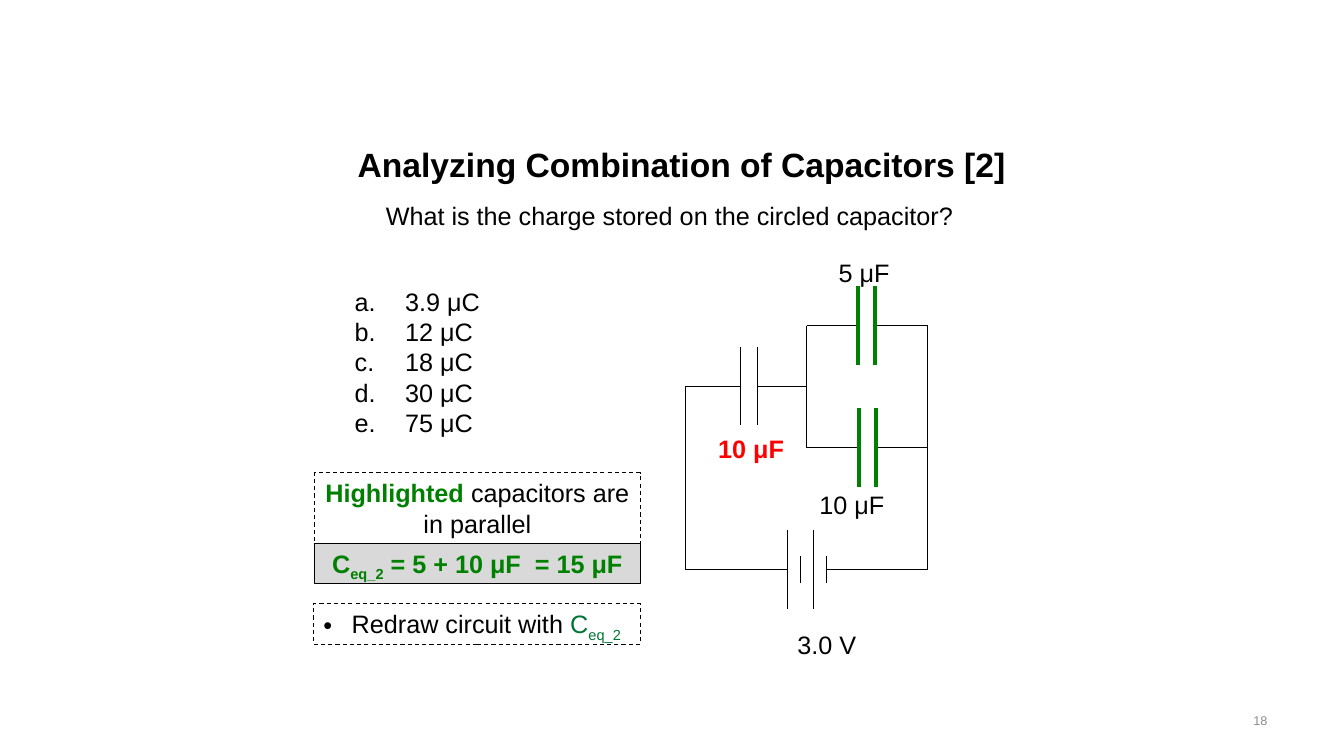
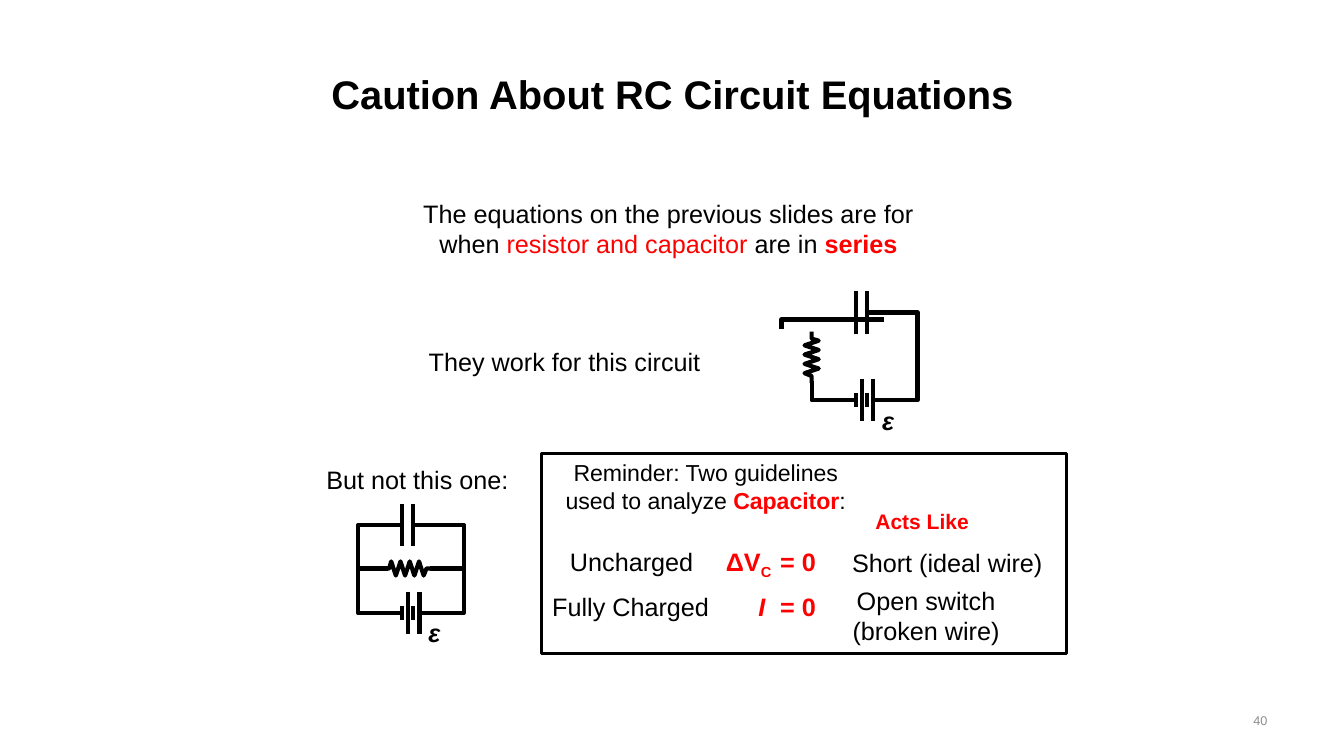
from dataclasses import dataclass

import pptx
import pptx.dml.color
import pptx.enum.dml
import pptx.enum.shapes
import pptx.enum.text
import pptx.oxml.xmlchemy
import pptx.util

ALIGN = pptx.enum.text.PP_ALIGN
ANCHOR = pptx.enum.text.MSO_ANCHOR


@dataclass(frozen=True)
class Theme:
    font: str = "Arial"
    black: str = "000000"
    red: str = "FF0000"
    green: str = "008000"
    dark_green: str = "007434"
    band: str = "D9D9D9"
    page_grey: str = "8C8C8C"
    title_small: float = 24
    title_large: float = 28.5
    body: float = 18
    reminder: float = 16.5
    heading: float = 15
    page_number: float = 9
    thin: float = 0.75
    frame: float = 2
    thick: float = 3


THEME = Theme()

# A paragraph is a list of spans; a span is (text, style words).
# A label is (left, top, width, height, paragraphs, size).
COMBINATION = {
    "title": ("Analyzing Combination of Capacitors [2]", THEME.title_small,
              (3.29, 1.16, 6.94, 0.94)),
    "number": "18",
    "labels": [
        (3.17, 1.94, 6.94, 0.4,
         [[("What is the charge stored on the circled capacitor?", "")]], THEME.body),
        (7.73, 6.19, 0.94, 0.4, [[("3.0 V", "")]], THEME.body),
        (6.98, 4.25, 0.94, 0.4, [[("10 μF", "red bold")]], THEME.body),
        (8.1, 2.5, 0.94, 0.4, [[("5 μF", "")]], THEME.body),
        (7.98, 4.81, 0.94, 0.4, [[("10 μF", "")]], THEME.body),
    ],
}
ANSWERS = ["3.9 μC", "12 μC", "18 μC", "30 μC", "75 μC"]
PARALLEL_NOTE = [[("Highlighted", "green bold"), (" capacitors are in parallel", "")]]
EQUIVALENT = [[("C", "green bold"), ("eq_2", "green bold sub"),
               (" = 5 + 10 μF  = 15 μF", "green bold")]]
NEXT_STEP = [[("Redraw circuit with ", ""), ("C", "dark_green"), ("eq_2", "dark_green sub")]]

CAUTION = {
    "title": ("Caution About RC Circuit Equations", THEME.title_large, (0.67, 0.3, 12, 1.25)),
    "number": "40",
    "labels": [
        (3.91, 1.92, 5.44, 0.71,
         [[("The equations on the previous slides are for when ", ""),
           ("resistor and capacitor ", "red"), ("are in ", ""), ("series", "red bold")]],
         THEME.body),
        (3.6, 3.39, 4, 0.4, [[("They work for this circuit", "")]], THEME.body),
        (2.92, 4.56, 2.44, 0.4, [[("But not this one:", "")]], THEME.body),
        (5.45, 4.5, 3.1, 0.66,
         [[("Reminder: Two guidelines used to analyze ", ""),
           ("Capacitor", "red bold"), (":", "")]], THEME.reminder),
        (8.49, 5, 1.31, 0.35, [[("Acts Like", "red bold")]], THEME.heading),
        (5.45, 5.37, 1.63, 0.4, [[("Uncharged", "")]], THEME.body),
        (7.06, 5.37, 0.73, 0.4, [[("ΔV", "red bold"), ("C", "red bold sub")]], THEME.body),
        (7.6, 5.37, 0.63, 0.4, [[("= 0", "red bold")]], THEME.body),
        (8.29, 5.38, 2.21, 0.4, [[("Short (ideal wire)", "")]], THEME.body),
        (5.35, 5.82, 1.81, 0.4, [[("Fully Charged", "")]], THEME.body),
        (7.4, 5.82, 0.31, 0.4, [[("Ι", "red bold italic")]], THEME.body),
        (7.6, 5.82, 0.63, 0.4, [[("= 0", "red bold")]], THEME.body),
        (8.28, 5.76, 1.81, 0.71,
         [[("Open switch", "")], [("(broken wire)", "")]], THEME.body),
    ],
}
REMINDER_FRAME = (5.37, 4.5, 5.21, 1.98)


def rgb(value):
    return pptx.dml.color.RGBColor.from_string(value)


def place(numbers):
    return [pptx.util.Inches(number) for number in numbers]


def write(frame, paragraphs, size, align=ALIGN.CENTER, anchor=ANCHOR.TOP):
    frame.word_wrap = True
    frame.auto_size = pptx.enum.text.MSO_AUTO_SIZE.NONE
    frame.vertical_anchor = anchor
    for index, spans in enumerate(paragraphs):
        para = frame.add_paragraph() if index else frame.paragraphs[0]
        para.alignment = align
        for text, style in spans:
            words = style.split()
            span = para.add_run()
            span.text = text
            font = span.font
            font.name, font.size = THEME.font, pptx.util.Pt(size)
            font.bold, font.italic = "bold" in words, "italic" in words
            colours = [word for word in words if hasattr(THEME, word)]
            font.color.rgb = rgb(getattr(THEME, colours[0] if colours else "black"))
            if "sub" in words:
                span._r.get_or_add_rPr().set("baseline", "-25000")


def set_bullets(frame, indent, tag, **attributes):
    margin = pptx.util.Inches(indent)
    for para in frame.paragraphs:
        properties = para._p.get_or_add_pPr()
        properties.set("marL", str(int(margin)))
        properties.set("indent", str(-int(margin)))
        font = pptx.oxml.xmlchemy.OxmlElement("a:buFont")
        font.set("typeface", THEME.font)
        bullet = pptx.oxml.xmlchemy.OxmlElement(tag)
        for name, value in attributes.items():
            bullet.set(name, value)
        properties.extend([font, bullet])


def add_label(page, left, top, width, height, paragraphs, size, **options):
    box = page.shapes.add_textbox(*place((left, top, width, height)))
    write(box.text_frame, paragraphs, size, **options)
    return box


def add_box(page, area, paragraphs=(), fill=None, dashed=False,
            width=THEME.thin, align=ALIGN.CENTER):
    box = page.shapes.add_shape(pptx.enum.shapes.MSO_SHAPE.RECTANGLE, *place(area))
    box.shadow.inherit = False
    if fill:
        box.fill.solid()
        box.fill.fore_color.rgb = rgb(fill)
    else:
        box.fill.background()
    box.line.color.rgb = rgb(THEME.black)
    box.line.width = pptx.util.Pt(width)
    if dashed:
        box.line.dash_style = pptx.enum.dml.MSO_LINE.DASH
    write(box.text_frame, paragraphs, THEME.body, align)
    return box


def add_line(page, start, end, width, colour=THEME.black):
    line = page.shapes.add_connector(
        pptx.enum.shapes.MSO_CONNECTOR.STRAIGHT, *place(start + end))
    line.line.color.rgb = rgb(colour)
    line.line.width = pptx.util.Pt(width)
    line._element.spPr.append(pptx.oxml.xmlchemy.OxmlElement("a:effectLst"))


def add_wire(page, points):
    """Draw a thick open line through the points."""
    first, *others = [tuple(place(point)) for point in points]
    builder = page.shapes.build_freeform(*first)
    builder.add_line_segments(others, close=False)
    wire = builder.convert_to_shape()
    wire.shadow.inherit = False
    wire.fill.background()
    wire.line.color.rgb = rgb(THEME.black)
    wire.line.width = pptx.util.Pt(THEME.thick)


def add_plates(page, y, plates, width, colour=THEME.black):
    """Draw upright plates, each given as (x, half height), centred on y."""
    for x, half in plates:
        add_line(page, (x, y - half), (x, y + half), width, colour)


def add_resistor(page, x, y, upright=False):
    zigzag = [(0.09 + 0.05 * i * 0.92, 0.07 if i % 2 else -0.07) for i in range(8)]
    outline = [(0, 0), (0.07, 0), *zigzag, (0.44, 0), (0.51, 0)]
    add_wire(page, [(x - side, y + along) if upright else (x + along, y + side)
                    for along, side in outline])


def add_rc_core(page, x, y):
    """Draw capacitor, battery and right-hand wire; x, y is the capacitor's right plate."""
    floor = y + 0.87
    add_wire(page, [(x, y), (x + 0.5, y), (x + 0.5, floor), (x + 0.06, floor)])
    add_wire(page, [(x - 0.11, floor), (x - 0.55, floor), (x - 0.55, floor - 0.19)])
    add_plates(page, y, [(x - 0.11, 0.21), (x, 0.21)], THEME.thick)
    add_plates(page, floor, [(x - 0.11, 0.07), (x - 0.05, 0.21), (x, 0.07), (x + 0.06, 0.21)],
               THEME.thick)
    add_label(page, x + 0.05, floor, 0.4, 0.4, [[("ε", "bold italic")]], THEME.body,
              align=ALIGN.LEFT)


def add_page(deck, content):
    page = deck.slides.add_slide(deck.slide_layouts[5])
    text, size, area = content["title"]
    title = page.shapes.title
    title.left, title.top, title.width, title.height = place(area)
    write(title.text_frame, [[(text, "bold")]], size, anchor=ANCHOR.MIDDLE)
    for label in content["labels"]:
        add_label(page, *label)
    add_label(page, 9.56, 6.95, 3.11, 0.4, [[(content["number"], "page_grey")]],
              THEME.page_number, align=ALIGN.RIGHT, anchor=ANCHOR.MIDDLE)
    return page


def build_combination(deck):
    page = add_page(deck, COMBINATION)
    left, split, right = 6.8, 8, 9.2
    top, middle, lower, floor = 3.23, 3.83, 4.44, 5.65
    capacitors = [  # first plate, y, wire start, wire end, plate colour, plate width
        (8.51, top, split, right, THEME.green, THEME.thick),
        (7.34, middle, left, split, THEME.black, THEME.thin),
        (8.52, lower, split, right, THEME.green, THEME.thick),
    ]
    for x, y, start, end, colour, width in capacitors:
        second = x + 0.17
        add_line(page, (start, y), (x, y), THEME.thin)
        add_line(page, (second, y), (end, y), THEME.thin)
        add_plates(page, y, [(x, 0.39), (second, 0.39)], width, colour)

    cells = [(7.81 + 0.13 * i, 0.13 if i % 2 else 0.39) for i in range(4)]
    add_plates(page, floor, cells, THEME.thin)
    add_line(page, (left, floor), (cells[0][0], floor), THEME.thin)
    add_line(page, (cells[-1][0], floor), (right, floor), THEME.thin)
    for x, start, end in [(left, middle, floor), (split, top, lower), (right, top, floor)]:
        add_line(page, (x, start), (x, end), THEME.thin)

    answers = add_label(page, 3.42, 2.79, 2.5, 1.62, [[(answer, "")] for answer in ANSWERS],
                        THEME.body, align=ALIGN.LEFT)
    set_bullets(answers.text_frame, 0.5, "a:buAutoNum", type="alphaLcPeriod")
    add_box(page, (3.12, 4.69, 3.23, 0.71), PARALLEL_NOTE, dashed=True)
    add_box(page, (3.12, 5.39, 3.23, 0.4), EQUIVALENT, fill=THEME.band)
    step = add_box(page, (3.11, 5.99, 3.24, 0.4), NEXT_STEP, dashed=True, align=ALIGN.LEFT)
    set_bullets(step.text_frame, 0.28, "a:buChar", char="•")


def build_caution(deck):
    page = add_page(deck, CAUTION)
    add_box(page, REMINDER_FRAME, width=THEME.frame)

    add_rc_core(page, 8.6, 3.1)
    add_wire(page, [(7.75, 3.26), (7.75, 3.17), (8.77, 3.17)])
    add_resistor(page, 8.05, 3.29, upright=True)

    add_rc_core(page, 4.1, 5.21)
    add_wire(page, [(3.55, 6), (3.55, 5.21), (3.99, 5.21)])
    add_resistor(page, 3.79, 5.64)
    for start, end in [(3.55, 3.85), (4.26, 4.6)]:
        add_line(page, (start, 5.64), (end, 5.64), THEME.thick)


def main():
    deck = pptx.Presentation()
    deck.slide_width, deck.slide_height = place((13.33, 7.5))
    build_combination(deck)
    build_caution(deck)
    deck.save("out.pptx")


if __name__ == "__main__":
    main()
